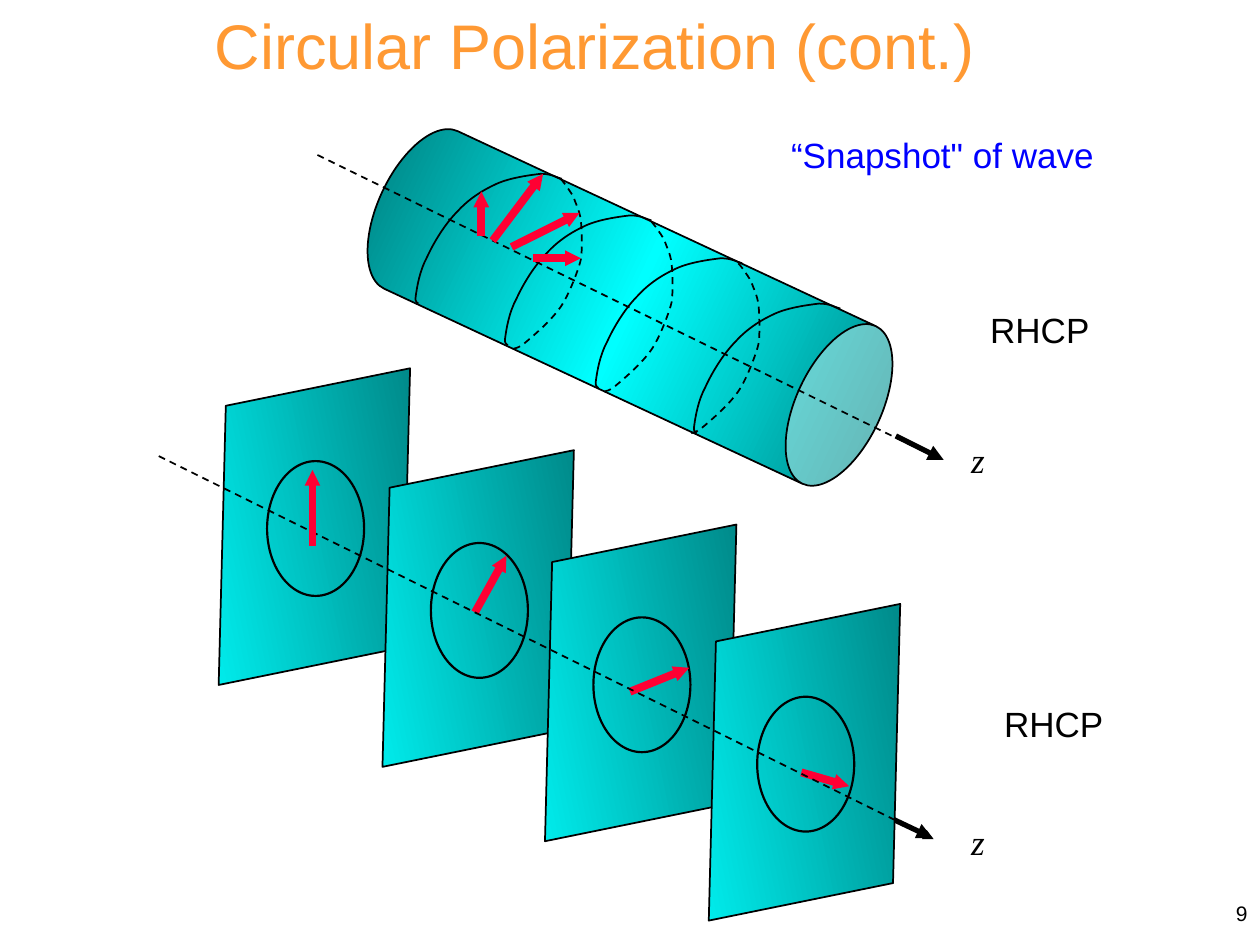
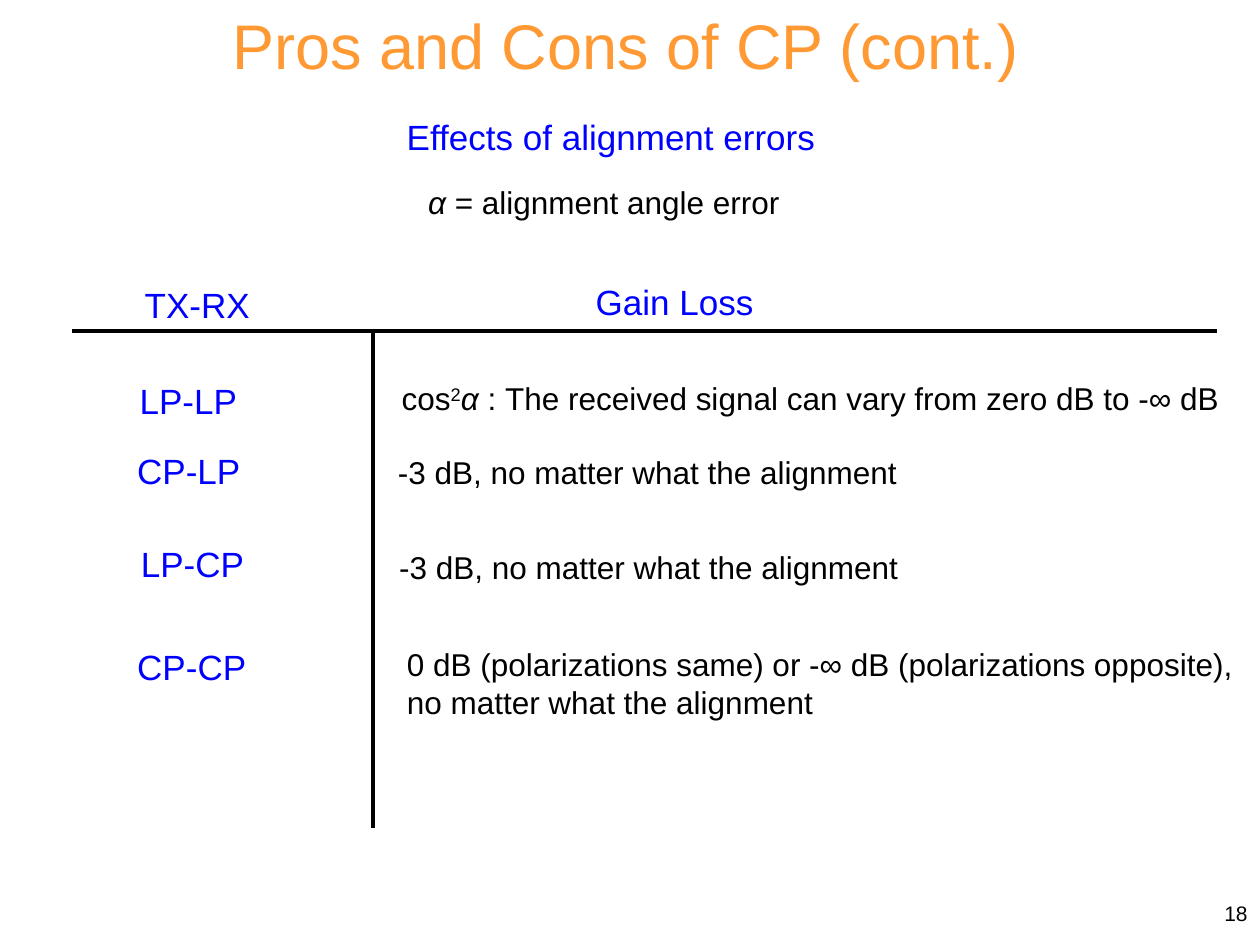
from typing import NamedTuple, Optional

from pptx import Presentation
from pptx.dml.color import RGBColor
from pptx.enum.dml import MSO_LINE
from pptx.enum.shapes import MSO_CONNECTOR, MSO_SHAPE
from pptx.enum.text import MSO_ANCHOR, MSO_AUTO_SIZE, PP_ALIGN
from pptx.oxml import parse_xml
from pptx.oxml.ns import nsdecls, qn
from pptx.shapes.autoshape import Shape
from pptx.slide import Slide
from pptx.util import Inches, Pt

ORANGE = RGBColor(0xFF, 0x99, 0x33)
BLUE = RGBColor(0x00, 0x00, 0xFF)
BLACK = RGBColor(0x00, 0x00, 0x00)
RED = RGBColor(0xFF, 0x00, 0x33)
CYAN = RGBColor(0x00, 0xFF, 0xFF)
TEAL = RGBColor(0x00, 0x76, 0x76)
SANS, SERIF = "Arial", "Times New Roman"

CENTER, RIGHT = PP_ALIGN.CENTER, PP_ALIGN.RIGHT
MIDDLE, NO_FIT = MSO_ANCHOR.MIDDLE, MSO_AUTO_SIZE.NONE
DASH, STRAIGHT = MSO_LINE.DASH, MSO_CONNECTOR.STRAIGHT
PARALLELOGRAM, CAN, OVAL = MSO_SHAPE.PARALLELOGRAM, MSO_SHAPE.CAN, MSO_SHAPE.OVAL
TITLE_ONLY = 5
MEDIUM_HEAD, SMALL_HEAD = "med", "sm"

Point = tuple[float, float]
Box = tuple[float, float, float, float]
Vector = tuple[Point, Point]


class Run(NamedTuple):
    """A piece of text with its own style."""

    text: str
    italic: bool = False
    superscript: bool = False


class Label(NamedTuple):
    """A text box made of paragraphs of runs."""

    box: Box
    paragraphs: list[list[Run]]
    size: int = 20
    color: RGBColor = BLACK
    font: str = SANS
    wrap: bool = False


class Segment(NamedTuple):
    """A straight line, optionally dashed or with an arrowhead."""

    start: Point
    end: Point
    color: RGBColor = BLACK
    width: float = 1
    dashed: bool = False
    head: Optional[str] = MEDIUM_HEAD


class Plane(NamedTuple):
    """A transverse plane and the field vector below the axis line."""

    corner: Point
    vector: Optional[Vector] = None


class GainRow(NamedTuple):
    """A link type and its gain loss."""

    link_box: Box
    link: str
    loss_box: Box
    loss: list[list[Run]]


PLANES = [
    Plane((1.5, 3.1)),
    Plane((2.8, 3.75), ((3.77, 4.86), (4.02, 4.41))),
    Plane((4.09, 4.34), ((5, 5.49), (5.47, 5.3))),
    Plane((5.39, 4.97), ((6.36, 6.13), (6.74, 6.24))),
]
TOP_VECTORS = [
    ((3.82, 1.87), (3.82, 1.52)),
    ((3.91, 1.91), (4.31, 1.38)),
    ((4.06, 1.96), (4.6, 1.69)),
    ((4.23, 2.05), (4.61, 2.05)),
    ((2.48, 4.33), (2.48, 3.73)),
]
FRONT_ARC = [
    (0.03, 1.03), (0.03, 1.02), (0, 1.03), (0.01, 0.97), (0.02, 0.9), (0.04, 0.77),
    (0.1, 0.66), (0.15, 0.55), (0.24, 0.4), (0.34, 0.3), (0.43, 0.2), (0.54, 0.13),
    (0.65, 0.08), (0.76, 0.03), (0.92, 0.01), (1, 0), (1.09, 0), (1.13, 0.03), (1.17, 0.04),
]
BACK_ARC = [
    (0.38, 0), (0.4, 0.02), (0.45, 0.09), (0.48, 0.14), (0.5, 0.2), (0.53, 0.25),
    (0.54, 0.33), (0.55, 0.42), (0.55, 0.6), (0.54, 0.64), (0.53, 0.69), (0.46, 0.89),
    (0.39, 1), (0.32, 1.11), (0.18, 1.23), (0.11, 1.29), (0.04, 1.35), (0.02, 1.34), (0, 1.35),
]
FRONT_CORNERS = [(3.29, 1.38), (4, 1.71), (4.72, 2.05), (5.5, 2.41)]
BACK_CORNERS = [(4.07, 1.42), (4.79, 1.76), (5.48, 2.09)]

NO_MATTER = "no matter what the alignment"
GAIN_ROWS = [
    GainRow((1.01, 2.96, 0.98, 0.44), "LP-LP", (3.09, 2.96, 6.77, 0.4),
            [[Run("cos"), Run("2", superscript=True), Run("α", italic=True),
              Run(" : The received signal can vary from zero dB to -∞ dB")]]),
    GainRow((0.99, 3.52, 1.03, 0.44), "CP-LP", (3.06, 3.55, 4.2, 0.4),
            [[Run(f"-3 dB, {NO_MATTER}")]]),
    GainRow((1.02, 4.26, 1.03, 0.44), "LP-CP", (3.07, 4.3, 4.2, 0.4),
            [[Run(f"-3 dB, {NO_MATTER}")]]),
    GainRow((0.99, 5.07, 1.08, 0.44), "CP-CP", (3.13, 5.07, 6.89, 0.71),
            [[Run("0 dB (polarizations same) or -∞ dB (polarizations opposite),")],
             [Run(NO_MATTER)]]),
]


def inches(values: tuple[float, ...]) -> list[Inches]:
    """Turn plain numbers into lengths."""
    return [Inches(v) for v in values]


def add_run(p, run: Run, size: int, color: RGBColor, font: str = SANS) -> None:
    """Append a styled run to a paragraph."""
    r = p.add_run()
    r.text = run.text
    r.font.name, r.font.size, r.font.color.rgb = font, Pt(size), color
    r.font.italic = run.italic
    if run.superscript:
        r.font._element.set("baseline", "30000")


def add_label(s: Slide, label: Label) -> Shape:
    """Draw a text box."""
    sp = s.shapes.add_textbox(*inches(label.box))
    tf = sp.text_frame
    tf.word_wrap = label.wrap
    for i, runs in enumerate(label.paragraphs):
        p = tf.add_paragraph() if i else tf.paragraphs[0]
        for run in runs:
            add_run(p, run, label.size, label.color, label.font)
    return sp


def add_segment(s: Slide, seg: Segment) -> None:
    """Draw a line or an arrow."""
    sp = s.shapes.add_connector(STRAIGHT, *inches(seg.start + seg.end))
    sp.line.color.rgb, sp.line.width = seg.color, Pt(seg.width)
    if seg.dashed:
        sp.line.dash_style = DASH
    sp_pr = sp._element.spPr
    if seg.head:
        sp_pr.find(qn("a:ln")).append(parse_xml(
            f'<a:tailEnd {nsdecls("a")} type="triangle" w="{seg.head}" len="{seg.head}"/>'))
    sp_pr.append(parse_xml(f'<a:effectLst {nsdecls("a")}/>'))


def add_field_vector(s: Slide, vector: Vector) -> None:
    """Draw a bold red field vector."""
    add_segment(s, Segment(*vector, RED, 4.5, head=SMALL_HEAD))


def outline(sp: Shape, width: float) -> None:
    """Give a shape a black outline, no fill and no shadow."""
    sp.shadow.inherit = False
    sp.fill.background()
    sp.line.color.rgb, sp.line.width = BLACK, Pt(width)


def add_solid(s: Slide, kind: int, box: Box, rotation: float, adjustment: float,
              colors: list[RGBColor], angle: int) -> None:
    """Draw a rotated preset shape with evenly spaced gradient stops."""
    sp = s.shapes.add_shape(kind, *inches(box))
    sp.rotation, sp.adjustments[0] = rotation, adjustment
    outline(sp, 1)
    sp.fill.gradient()
    stops = "".join(
        f'<a:gs pos="{100000 * i // (len(colors) - 1)}"><a:srgbClr val="{color}"/></a:gs>'
        for i, color in enumerate(colors))
    sp_pr = sp._element.spPr
    sp_pr.replace(sp_pr.find(qn("a:gradFill")), parse_xml(
        f'<a:gradFill {nsdecls("a")} rotWithShape="1"><a:gsLst>{stops}</a:gsLst>'
        f'<a:lin ang="{angle * 60000}" scaled="1"/></a:gradFill>'))


def add_arc(s: Slide, points: list[Point], corner: Point, dashed: bool) -> None:
    """Draw a wavefront arc of cubic curves whose box starts at the corner."""
    vertices = [inches((corner[0] + x, corner[1] + y)) for x, y in points]
    builder = s.shapes.build_freeform(*vertices[0], scale=1.0)
    builder.add_line_segments(vertices[1:], close=False)
    sp = builder.convert_to_shape()
    outline(sp, 1)
    if dashed:
        sp.line.dash_style = DASH
    lines = list(sp._element.spPr.iter(qn("a:lnTo")))
    for i in range(0, len(lines), 3):
        curve = parse_xml(f'<a:cubicBezTo {nsdecls("a")}/>')
        lines[i].addprevious(curve)
        for line in lines[i:i + 3]:
            curve.append(line[0])
            line.getparent().remove(line)


def add_plane(s: Slide, plane: Plane) -> None:
    """Draw a plane, its circle and its field vector."""
    x, y = plane.corner
    add_solid(s, PARALLELOGRAM, (x, y, 1.99, 2.16), 348.5, 0.25, [CYAN, TEAL], 0)
    circle = s.shapes.add_shape(OVAL, *inches((x + 0.62, y + 0.56, 0.77, 1.07)))
    outline(circle, 1.25)
    if plane.vector:
        add_field_vector(s, plane.vector)


def add_z_head(s: Slide, start: Point, end: Point, label_y: float) -> None:
    """Draw the bold head of an axis and its name."""
    add_segment(s, Segment(start, end, width=3))
    add_label(s, Label((7.54, label_y, 0.4, 0.43), [[Run(" z", italic=True)]], font=SERIF))


def new_slide(prs: Presentation, title: str, box: Box, number: int) -> Slide:
    """Add a slide with its title and page number."""
    s = prs.slides.add_slide(prs.slide_layouts[TITLE_ONLY])
    sp = s.shapes.title
    sp.left, sp.top, sp.width, sp.height = inches(box)
    tf = sp.text_frame
    tf.auto_size, tf.word_wrap = NO_FIT, True
    p = tf.paragraphs[0]
    p.alignment = CENTER
    add_run(p, Run(title), 36, ORANGE)
    page = add_label(s, Label((7.92, 7, 2.08, 0.5), [[Run(str(number))]], 12, wrap=True))
    page.text_frame.vertical_anchor = MIDDLE
    page.text_frame.paragraphs[0].alignment = RIGHT
    return s


def build_polarization(prs: Presentation) -> None:
    """Build the slide with the wave snapshot and the planes."""
    s = new_slide(prs, "Circular Polarization (cont.) ", (1.12, 0, 7.34, 0.7), 9)
    for x, y in ((7.76, 2.4), (7.87, 5.53)):
        add_label(s, Label((x, y, 1.72, 0.43), [[Run("RHCP")]], wrap=True))
    add_z_head(s, (7.02, 6.47), (7.4, 6.65), 6.46)
    for plane in PLANES:
        add_plane(s, plane)
    add_segment(s, Segment((1.26, 3.62), (7.41, 6.66), dashed=True))
    add_solid(s, CAN, (4.31, 0.27, 1.38, 4.34), 115, 0.492, [TEAL, CYAN, TEAL], 90)
    add_segment(s, Segment((2.52, 1.23), (7.47, 3.65), dashed=True))
    for corner in FRONT_CORNERS:
        add_arc(s, FRONT_ARC, corner, dashed=False)
    for corner in BACK_CORNERS:
        add_arc(s, BACK_ARC, corner, dashed=True)
    add_z_head(s, (7.11, 3.46), (7.49, 3.65), 3.43)
    for vector in TOP_VECTORS:
        add_field_vector(s, vector)
    add_label(s, Label((6.18, 1.01, 2.63, 0.44), [[Run('“Snapshot" of wave')]], color=BLUE))


def build_alignment(prs: Presentation) -> None:
    """Build the slide on alignment errors."""
    s = new_slide(prs, "Pros and Cons of CP (cont.)", (0.24, 0, 9.45, 0.7), 18)
    headings = [
        ((3.13, 0.87, 3.46, 0.44), "Effects of alignment errors"),
        ((1.05, 2.2, 1.05, 0.44), "TX-RX"),
        ((4.63, 2.18, 1.46, 0.44), "Gain Loss"),
    ]
    for box, text in headings + [(row.link_box, row.link) for row in GAIN_ROWS]:
        add_label(s, Label(box, [[Run(text)]], color=BLUE))
    add_label(s, Label((3.3, 1.4, 3.03, 0.4),
                       [[Run("α", italic=True), Run(" = alignment angle error")]], 18))
    for row in GAIN_ROWS:
        add_label(s, Label(row.loss_box, row.loss, 18))
    for start, end in (((0.57, 2.63), (9.66, 2.63)), ((2.96, 2.63), (2.96, 6.57))):
        add_segment(s, Segment(start, end, width=2.25, head=None))


def main() -> None:
    """Build and save the presentation."""
    prs = Presentation()
    prs.slide_width, prs.slide_height = Inches(10), Inches(7.5)
    build_polarization(prs)
    build_alignment(prs)
    prs.save("out.pptx")


if __name__ == "__main__":
    main()
